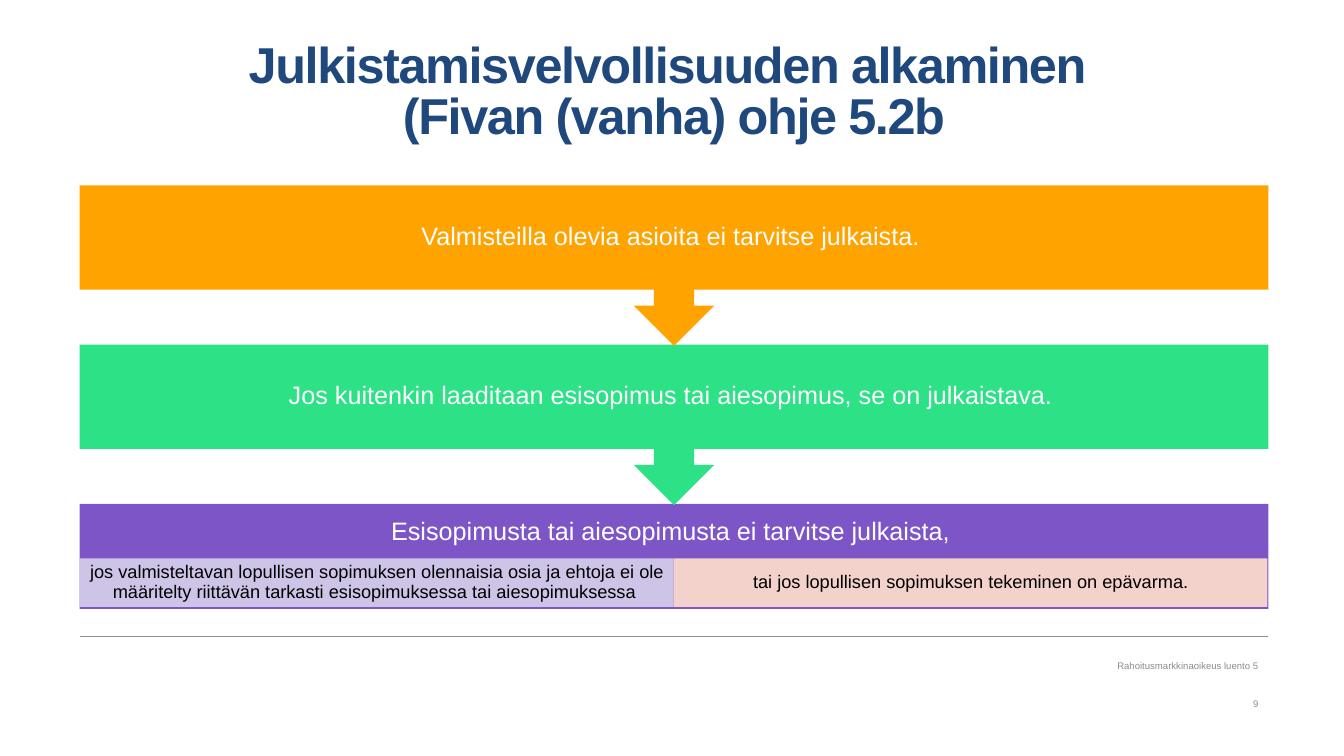
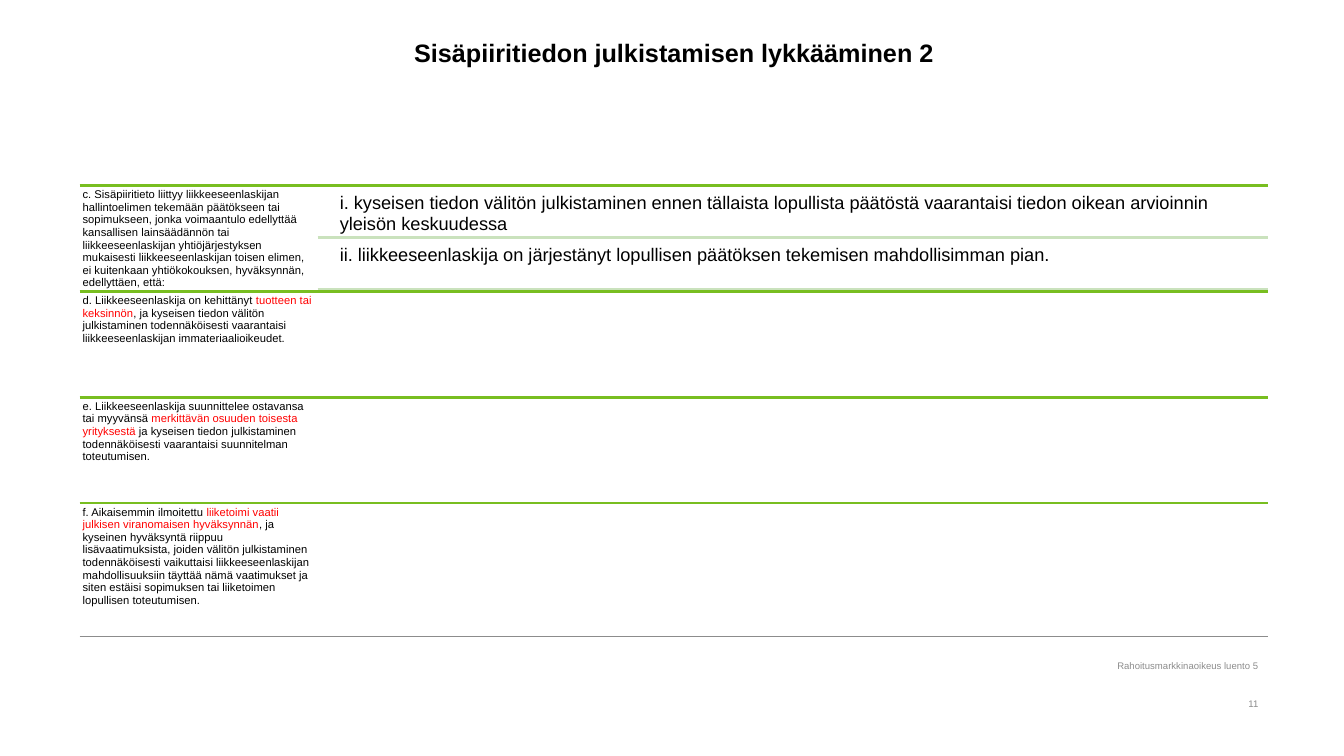
from dataclasses import dataclass

from lxml import etree
from pptx import Presentation
from pptx.dml.color import RGBColor
from pptx.enum import shapes, text
from pptx.oxml import ns
from pptx.util import Emu, Pt

PX = 9144


@dataclass(frozen=True)
class Theme:
    font: str = "Arial"
    navy: str = "1F497D"
    black: str = "000000"
    white: str = "FFFFFF"
    red: str = "FF0000"
    grey: str = "8C8C8C"
    green: str = "78BE20"
    pale_green: str = "CAE2BD"
    orange: str = "FFA300"
    mint: str = "2CE186"
    purple: str = "7D55C7"
    lilac: str = "D7D1EB"
    peach: str = "FFE0CB"
    headline: float = 36
    heading: float = 18
    body: float = 13
    note: float = 8
    footer: float = 6.8


THEME = Theme()


@dataclass(frozen=True)
class Area:
    left: int
    top: int
    width: int
    height: int

    def emu(self) -> tuple[Emu, ...]:
        return tuple(Emu(side * PX) for side in (self.left, self.top, self.width, self.height))


@dataclass(frozen=True)
class Span:
    words: str
    color: str = THEME.black


@dataclass(frozen=True)
class Step:
    words: str
    fill: str


@dataclass(frozen=True)
class Condition:
    spans: tuple[Span, ...]
    details: tuple[str, ...] = ()


LEFT, WIDTH = 79, 1179
RIGHT = LEFT + WIDTH
TOP = 184
TITLE = Area(LEFT, 42, WIDTH, 131)
FOOTER_RULE = 631
STEP_PITCH, STEP_HEIGHT = 158, 159
BAND_HEIGHT, BAND_HEAD, CASE_HEIGHT = 104, 56, 48
ROW_PITCH, COLUMN = 105, 236
DETAIL_INDENT, DETAIL_PITCH, DETAIL_HEIGHT = 17, 51, 49

STEPS = (
    Step("Valmisteilla olevia asioita ei tarvitse julkaista. ", THEME.orange),
    Step("Jos kuitenkin laaditaan esisopimus tai aiesopimus, se on julkaistava. ", THEME.mint),
)
EXCEPTION = Step("Esisopimusta tai aiesopimusta ei tarvitse julkaista, ", THEME.purple)
CASES = (
    Step(
        "jos valmisteltavan lopullisen sopimuksen olennaisia osia ja ehtoja ei ole "
        "määritelty riittävän tarkasti esisopimuksessa tai aiesopimuksessa ",
        THEME.lilac,
    ),
    Step("tai jos lopullisen sopimuksen tekeminen on epävarma.", THEME.peach),
)
CONDITIONS = (
    Condition(
        (Span(
            "c. Sisäpiiritieto liittyy liikkeeseenlaskijan hallintoelimen tekemään "
            "päätökseen tai sopimukseen, jonka voimaantulo edellyttää kansallisen "
            "lainsäädännön tai liikkeeseenlaskijan yhtiöjärjestyksen mukaisesti "
            "liikkeeseenlaskijan toisen elimen, ei kuitenkaan yhtiökokouksen, "
            "hyväksynnän, edellyttäen, että:"
        ),),
        (
            "i. kyseisen tiedon välitön julkistaminen ennen tällaista lopullista päätöstä "
            "vaarantaisi tiedon oikean arvioinnin yleisön keskuudessa",
            "ii. liikkeeseenlaskija on järjestänyt lopullisen päätöksen tekemisen "
            "mahdollisimman pian.",
        ),
    ),
    Condition((
        Span("d. Liikkeeseenlaskija on kehittänyt "),
        Span("tuotteen tai keksinnön", THEME.red),
        Span(
            ", ja kyseisen tiedon välitön julkistaminen todennäköisesti vaarantaisi "
            "liikkeeseenlaskijan immateriaalioikeudet."
        ),
    )),
    Condition((
        Span("e. Liikkeeseenlaskija suunnittelee ostavansa tai myyvänsä "),
        Span("merkittävän osuuden toisesta yrityksestä", THEME.red),
        Span(
            " ja kyseisen tiedon julkistaminen todennäköisesti vaarantaisi "
            "suunnitelman toteutumisen."
        ),
    )),
    Condition((
        Span("f. Aikaisemmin ilmoitettu "),
        Span("liiketoimi vaatii julkisen viranomaisen hyväksynnän", THEME.red),
        Span(
            ", ja kyseinen hyväksyntä riippuu lisävaatimuksista, joiden välitön "
            "julkistaminen todennäköisesti vaikuttaisi liikkeeseenlaskijan "
            "mahdollisuuksiin täyttää nämä vaatimukset ja siten estäisi sopimuksen "
            "tai liiketoimen lopullisen toteutumisen."
        ),
    )),
)


def write(box, spans: tuple[Span, ...], *, size: float, bold: bool = False,
          align=text.PP_ALIGN.LEFT, anchor=text.MSO_ANCHOR.TOP,
          insets: tuple[int, int, int, int] = (0, 0, 0, 0),
          line_spacing: float = 1.0, tracking: int = 0) -> None:
    frame = box.text_frame
    frame.word_wrap = True
    frame.vertical_anchor = anchor
    (frame.margin_left, frame.margin_top,
     frame.margin_right, frame.margin_bottom) = (Emu(inset * PX) for inset in insets)
    para = frame.paragraphs[0]
    para.alignment = align
    para.line_spacing = line_spacing
    for span in spans:
        for index, line in enumerate(span.words.split("\n")):
            if index:
                para.add_line_break()
            run = para.add_run()
            run.text = line
            run.font.name = THEME.font
            run.font.size = Pt(size)
            run.font.bold = bold
            run.font.color.rgb = RGBColor.from_string(span.color)
            if tracking:
                run.font._element.set("spc", str(tracking))


def add_text(page, area: Area, *spans: Span, **text_format) -> None:
    write(page.shapes.add_textbox(*area.emu()), spans, **text_format)


def add_block(page, kind, area: Area, words: str, *, fill: str, color: str,
              opacity: int = 100, **text_format) -> None:
    box = page.shapes.add_shape(kind, *area.emu())
    box.shadow.inherit = False
    box.line.fill.background()
    box.fill.solid()
    box.fill.fore_color.rgb = RGBColor.from_string(fill)
    if opacity < 100:
        tint = box._element.spPr.find(".//" + ns.qn("a:srgbClr"))
        etree.SubElement(tint, ns.qn("a:alpha")).set("val", str(opacity * 1000))
    write(box, (Span(words, color),), align=text.PP_ALIGN.CENTER,
          anchor=text.MSO_ANCHOR.MIDDLE, line_spacing=0.9, **text_format)


def add_rule(page, left: int, top: int, color: str, weight: float) -> None:
    rule = page.shapes.add_connector(
        shapes.MSO_CONNECTOR.STRAIGHT,
        *(Emu(point * PX) for point in (left, top, RIGHT, top)))
    rule.line.color.rgb = RGBColor.from_string(color)
    rule.line.width = Pt(weight)
    etree.SubElement(rule._element.spPr, ns.qn("a:effectLst"))


def add_page(deck, title: str, number: int, **title_format):
    page = deck.slides.add_slide(deck.slide_layouts[6])
    color = title_format.pop("color")
    add_rule(page, LEFT, FOOTER_RULE, THEME.grey, 0.75)
    add_text(page, TITLE, Span(title, color), bold=True,
             align=text.PP_ALIGN.CENTER, line_spacing=0.85, **title_format)
    for top, words in ((651, "Rahoitusmarkkinaoikeus luento 5"), (689, str(number))):
        add_text(page, Area(720, top, 528, 18), Span(words, THEME.grey),
                 size=THEME.footer, align=text.PP_ALIGN.RIGHT,
                 anchor=text.MSO_ANCHOR.MIDDLE, insets=(10, 5, 0, 5))
    return page


def draw_disclosure_start(deck) -> None:
    page = add_page(
        deck, "Julkistamisvelvollisuuden alkaminen \n(Fivan (vanha) ohje 5.2b", 9,
        size=THEME.headline, color=THEME.navy, tracking=-100)
    band_top = TOP + len(STEPS) * STEP_PITCH
    add_block(page, shapes.MSO_SHAPE.RECTANGLE, Area(LEFT, band_top, WIDTH, BAND_HEIGHT),
              EXCEPTION.words, fill=EXCEPTION.fill, color=THEME.white, size=THEME.heading,
              insets=(14, 14, 14, BAND_HEIGHT - BAND_HEAD + 14))
    case_width = WIDTH // len(CASES)
    for index, case in enumerate(CASES):
        area = Area(LEFT + index * case_width, band_top + 54, case_width, CASE_HEIGHT)
        add_block(page, shapes.MSO_SHAPE.RECTANGLE, area, case.words, fill=case.fill,
                  color=THEME.black, opacity=90, size=THEME.body, insets=(10, 2, 10, 2))
    for index, step in reversed(list(enumerate(STEPS))):
        area = Area(LEFT, TOP + index * STEP_PITCH, WIDTH, STEP_HEIGHT)
        add_block(page, shapes.MSO_SHAPE.DOWN_ARROW_CALLOUT, area, step.words,
                  fill=step.fill, color=THEME.white, size=THEME.heading,
                  insets=(14, 14, 14, 14))


def draw_disclosure_delay(deck) -> None:
    page = add_page(deck, "Sisäpiiritiedon julkistamisen lykkääminen 2", 11,
                    size=THEME.heading, color=THEME.black)
    detail_left = LEFT + COLUMN
    for index, condition in enumerate(CONDITIONS):
        top = TOP + index * ROW_PITCH
        add_rule(page, LEFT, top, THEME.green, 2)
        add_text(page, Area(LEFT, top, COLUMN, ROW_PITCH), *condition.spans,
                 size=THEME.note, insets=(3, 3, 3, 3), line_spacing=0.94)
        for place, detail in enumerate(condition.details):
            detail_top = top + 3 + place * DETAIL_PITCH
            left = detail_left + DETAIL_INDENT
            add_text(page, Area(left, detail_top, RIGHT - left, DETAIL_HEIGHT),
                     Span(detail), size=THEME.body, insets=(5, 5, 5, 5),
                     line_spacing=0.94)
            add_rule(page, detail_left, detail_top + DETAIL_HEIGHT, THEME.pale_green, 2)


def main() -> None:
    deck = Presentation()
    deck.slide_width, deck.slide_height = Emu(1333 * PX), Emu(750 * PX)
    draw_disclosure_start(deck)
    draw_disclosure_delay(deck)
    deck.save("out.pptx")


if __name__ == "__main__":
    main()
